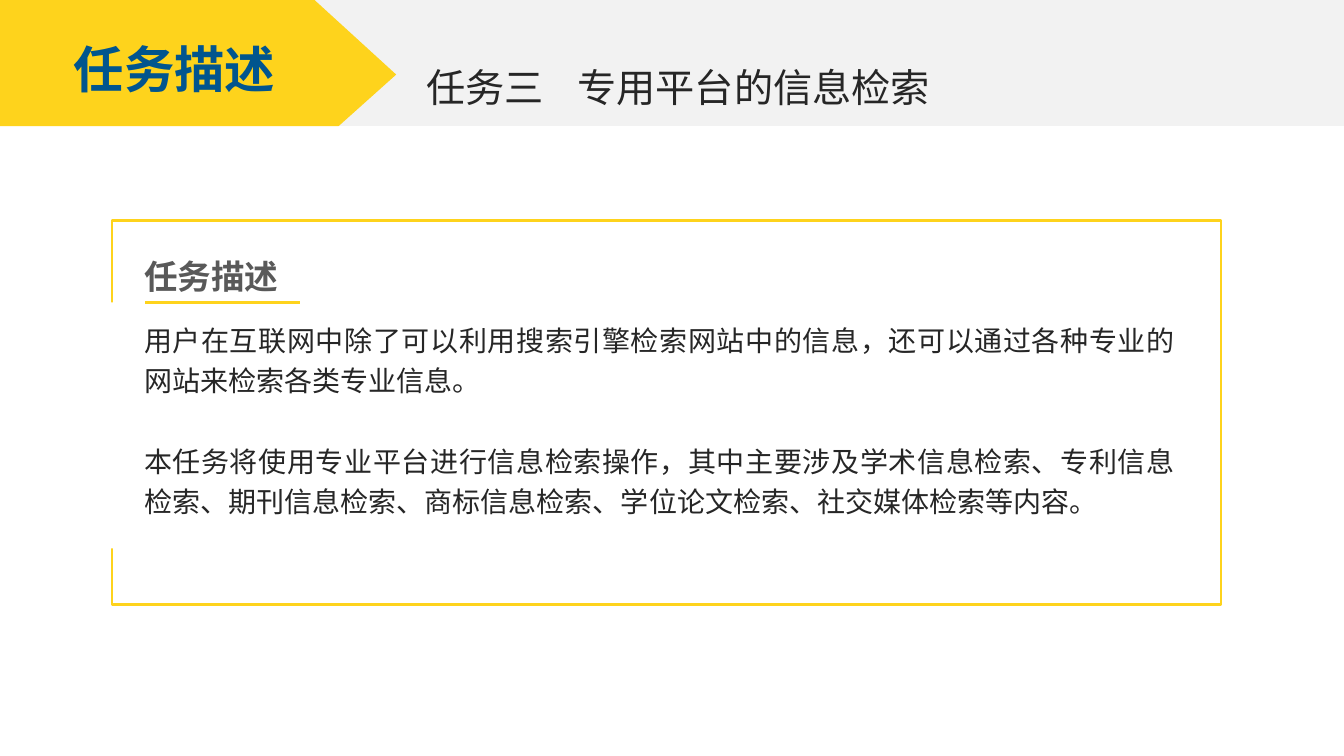
from dataclasses import dataclass

from lxml.etree import SubElement
from pptx import Presentation
from pptx.dml.color import RGBColor
from pptx.enum.shapes import MSO_CONNECTOR as Connector, MSO_SHAPE as Shape
from pptx.enum.text import MSO_ANCHOR as Anchor, MSO_AUTO_SIZE as AutoSize, PP_ALIGN as Align
from pptx.oxml.ns import qn
from pptx.util import Inches, Pt


@dataclass(frozen=True)
class Theme:
    white: str = "FFFFFF"
    yellow: str = "FED31C"
    band: str = "F2F2F2"
    blue: str = "01558E"
    ink: str = "262626"
    heading: str = "595959"
    font: str = "Arial"
    badge_font: str = "Noto Sans CJK SC"
    badge_size: int = 36
    subtitle_size: int = 28
    heading_size: int = 24
    body_size: int = 20
    line_width: int = 2


THEME = Theme()
WIDTH, HEIGHT = 13.33, 7.5

BODY = [
    "用户在互联网中除了可以利用搜索引擎检索网站中的信息，还可以通过各种专业的网站来检索各类专业信息。",
    "本任务将使用专业平台进行信息检索操作，其中主要涉及学术信息检索、专利信息检索、期刊信息检索、商标信息检索、学位论文检索、社交媒体检索等内容。",
]


def paint(shape, fill, line=None):
    shape.shadow.inherit = False
    shape.fill.solid()
    shape.fill.fore_color.rgb = RGBColor.from_string(fill)
    if line:
        shape.line.color.rgb = RGBColor.from_string(line)
        shape.line.width = Pt(THEME.line_width)
    else:
        shape.line.fill.background()


def add_rectangle(slide, box, fill, line=None):
    shape = slide.shapes.add_shape(Shape.RECTANGLE, *map(Inches, box))
    paint(shape, fill, line)


def style(paragraph, size, color, bold=False, font=THEME.font):
    paragraph.font.name = font
    paragraph.font.size = Pt(size)
    paragraph.font.bold = bold
    paragraph.font.color.rgb = RGBColor.from_string(color)


def add_text(slide, box, texts, size, color, bold=False, align=Align.LEFT, spacing=1.0, gap=0):
    frame = slide.shapes.add_textbox(*map(Inches, box)).text_frame
    frame.word_wrap = True
    for index, text in enumerate(texts):
        paragraph = frame.add_paragraph() if index else frame.paragraphs[0]
        paragraph.text = text
        paragraph.alignment = align
        paragraph.line_spacing = spacing
        if index:
            paragraph.space_before = Pt(gap)
        style(paragraph, size, color, bold)


def add_rule(slide, left, right, top):
    rule = slide.shapes.add_connector(
        Connector.STRAIGHT, Inches(left), Inches(top), Inches(right), Inches(top))
    rule.line.color.rgb = RGBColor.from_string(THEME.yellow)
    rule.line.width = Pt(THEME.line_width)
    SubElement(rule._element.spPr, qn("a:effectLst"))


def add_badge(slide, box, text):
    left, top, width, height = box
    outline = [(0, 0), (3.12, 0), (width, 0.74), (3.36, height), (0, height)]
    points = [(Inches(left + x), Inches(top + y)) for x, y in outline]
    builder = slide.shapes.build_freeform(*points[0], scale=1.0)
    builder.add_line_segments(points[1:], close=True)
    paint(builder.convert_to_shape(), THEME.yellow)

    title = slide.shapes.title
    title.left, title.top = Inches(left + 0.62), Inches(top + 0.33)
    title.width, title.height = Inches(2.22), Inches(0.71)
    slide.shapes._spTree.append(title._element)
    frame = title.text_frame
    frame.text = text
    frame.word_wrap = False
    frame.auto_size = AutoSize.NONE
    frame.vertical_anchor = Anchor.TOP
    paragraph = frame.paragraphs[0]
    paragraph.alignment = Align.CENTER
    style(paragraph, THEME.badge_size, THEME.blue, True, THEME.badge_font)


def add_header(slide, box):
    left, top, width, height = box
    add_rectangle(slide, (left + 2.55, top, width - 2.55, height), THEME.band)
    add_badge(slide, (left, top, 3.93, height), "任务描述")
    for offset, span, text in [(4.13, 1.49, "任务三"), (5.63, 7.04, "专用平台的信息检索")]:
        add_text(slide, (left + offset, top + 0.58, span, 0.57), [text],
                 THEME.subtitle_size, THEME.ink)


def add_description(slide, box):
    left, top, width, height = box
    text_left = left + 0.22
    add_rectangle(slide, box, THEME.white, THEME.yellow)
    add_rectangle(slide, (left - 0.14, top + 0.81, 0.36, 2.44), THEME.white)
    add_rule(slide, left + 0.33, left + 1.86, top + 0.81)
    add_text(slide, (text_left, top + 0.9, width - 0.58, 2.12), BODY,
             THEME.body_size, THEME.ink, align=Align.JUSTIFY, spacing=1.2, gap=29)
    add_text(slide, (text_left, top + 0.22, 3.07, 0.54), ["任务描述"],
             THEME.heading_size, THEME.heading, True, Align.JUSTIFY, 1.2)


def main():
    presentation = Presentation()
    presentation.slide_width, presentation.slide_height = Inches(WIDTH), Inches(HEIGHT)
    slide = presentation.slides.add_slide(presentation.slide_layouts[5])
    add_description(slide, (WIDTH / 12, 2.19, 11, 3.81))
    add_header(slide, (0, 0, WIDTH, HEIGHT / 6))
    presentation.save("out.pptx")


if __name__ == "__main__":
    main()
